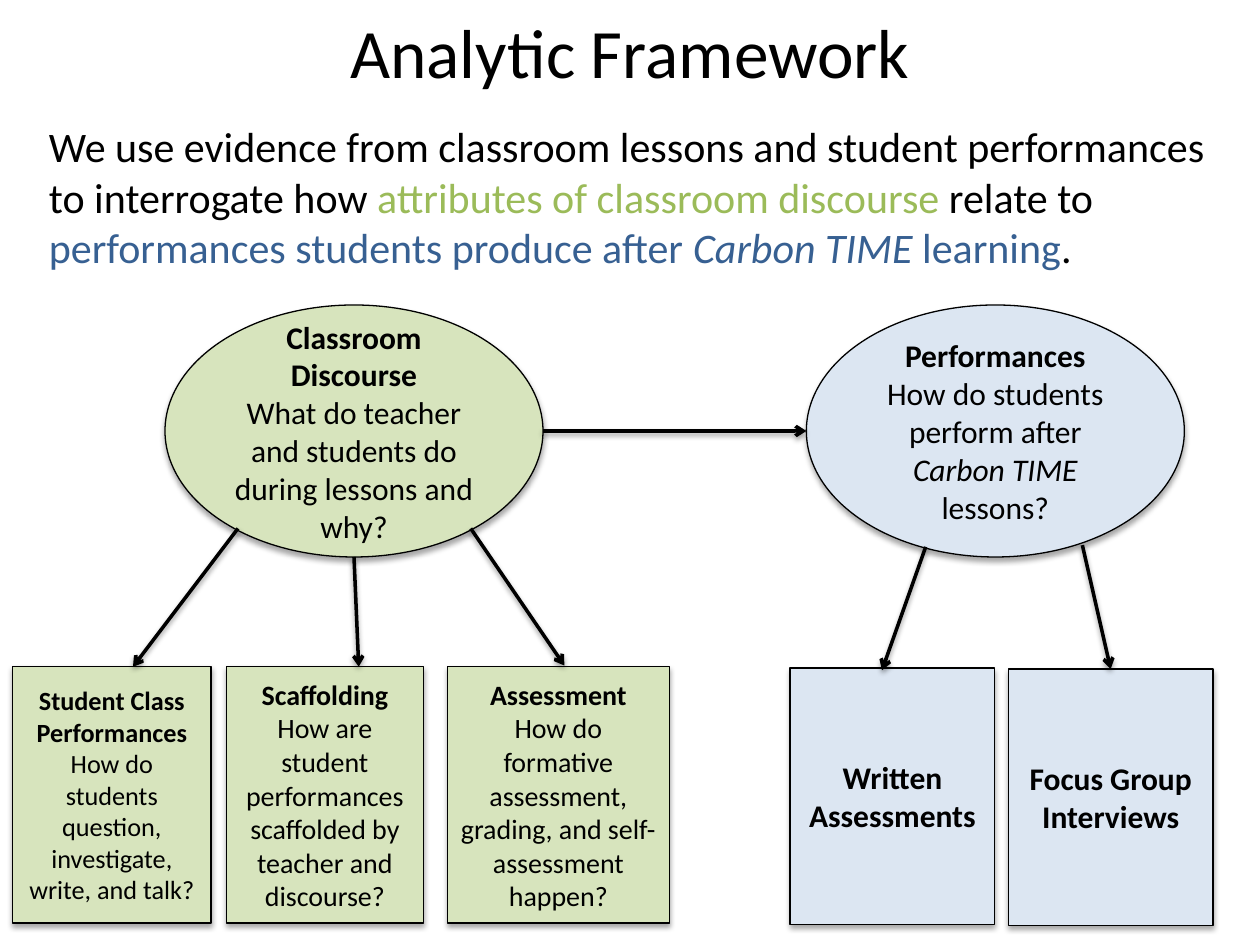
from lxml.etree import SubElement
from pptx import Presentation
from pptx.dml.color import RGBColor
from pptx.enum.shapes import MSO_CONNECTOR, MSO_SHAPE
from pptx.enum.text import MSO_ANCHOR, PP_ALIGN
from pptx.oxml.ns import qn
from pptx.util import Pt

FONT = "Calibri"
BLACK = "000000"
GREEN_FILL = "D7E4BD"
BLUE_FILL = "DCE6F2"
GREEN_TEXT = "9BBB59"
BLUE_TEXT = "376092"


def color(value):
    """Turn a hex string into a colour."""
    return RGBColor.from_string(value)


def add_span(para, text, size, ink=BLACK, bold=False, italic=False):
    """Add one formatted run to a paragraph."""
    span = para.add_run()
    span.text = text
    font = span.font
    font.name, font.size = FONT, Pt(size)
    font.bold, font.italic = bold, italic
    font.color.rgb = color(ink)


def add_shadow(properties, alpha, distance):
    """Give shape properties a soft shadow that falls straight down."""
    effects = properties.find(qn("a:effectLst"))
    if effects is None:
        effects = SubElement(properties, qn("a:effectLst"))
    shadow = SubElement(effects, qn("a:outerShdw"), blurRad=str(Pt(3.1)),
                        dist=str(Pt(distance)), dir="5400000", rotWithShape="0")
    ink = SubElement(shadow, qn("a:srgbClr"), val=BLACK)
    SubElement(ink, qn("a:alpha"), val=str(alpha * 1000))


def add_text(page, left, top, width, height, spans, size, align, anchor):
    """Add a wrapping text box with one paragraph of (text, colour, italic) spans."""
    box = page.shapes.add_textbox(Pt(left), Pt(top), Pt(width), Pt(height))
    frame = box.text_frame
    frame.word_wrap = True
    frame.vertical_anchor = anchor
    para = frame.paragraphs[0]
    para.alignment = align
    for text, ink, italic in spans:
        add_span(para, text, size, ink, italic=italic)


def add_node(page, kind, left, top, width, height, fill, size, heading, question=()):
    """Add a shadowed shape with a bold heading and (text, italic) question spans."""
    node = page.shapes.add_shape(kind, Pt(left), Pt(top), Pt(width), Pt(height))
    node.shadow.inherit = False
    node.fill.solid()
    node.fill.fore_color.rgb = color(fill)
    node.line.color.rgb = color(BLACK)
    node.line.width = Pt(0.75)
    add_shadow(node._element.spPr, 35, 1.8)
    frame = node.text_frame
    frame.word_wrap = True
    frame.vertical_anchor = MSO_ANCHOR.MIDDLE
    para = frame.paragraphs[0]
    para.alignment = PP_ALIGN.CENTER
    add_span(para, heading, size, bold=True)
    if question:
        para = frame.add_paragraph()
        para.alignment = PP_ALIGN.CENTER
        for text, italic in question:
            add_span(para, text, size, italic=italic)
    return node


def add_arrow(page, start, end):
    """Add a black arrow between two points."""
    arrow = page.shapes.add_connector(
        MSO_CONNECTOR.STRAIGHT, *(Pt(value) for value in start + end))
    arrow.line.color.rgb = color(BLACK)
    arrow.line.width = Pt(2)
    SubElement(arrow.line._get_or_add_ln(), qn("a:tailEnd"), type="arrow")
    add_shadow(arrow._element.spPr, 38, 1.6)
    return arrow


def main():
    """Build the slide and save it."""
    deck = Presentation()
    deck.slide_width, deck.slide_height = Pt(720), Pt(540)
    page = deck.slides.add_slide(deck.slide_layouts[6])

    add_text(page, 36, 0.7, 648, 57, [("Analytic Framework", BLACK, False)],
             39.6, PP_ALIGN.CENTER, MSO_ANCHOR.MIDDLE)
    statement = [
        ("We use evidence from classroom lessons and student performances "
         "to interrogate how ", BLACK, False),
        ("attributes of classroom discourse ", GREEN_TEXT, False),
        ("relate to ", BLACK, False),
        ("performances students produce after ", BLUE_TEXT, False),
        ("Carbon TIME ", BLUE_TEXT, True),
        ("learning", BLUE_TEXT, False),
        (".", BLACK, False),
    ]
    add_text(page, 20.9, 65.5, 683.5, 94.5, statement, 24, PP_ALIGN.LEFT, MSO_ANCHOR.TOP)

    topics = [
        (94.3, GREEN_FILL, "Classroom Discourse",
         [("What do teacher and students do during lessons and why?", False)]),
        (460.8, BLUE_FILL, "Performances",
         [("How do students perform after ", False), ("Carbon TIME ", True),
          ("lessons?", False)]),
    ]
    for left, fill, heading, question in topics:
        add_node(page, MSO_SHAPE.OVAL, left, 174.3, 216, 144, fill, 18, heading, question)

    sources = [
        (7.2, 381, 113.5, GREEN_FILL, 15, "Student Class Performances",
         [("How do students question, investigate, write, and talk?", False)]),
        (129.4, 381, 112.5, GREEN_FILL, 16, "Scaffolding",
         [("How are student performances scaffolded by teacher and discourse?", False)]),
        (255.6, 381, 127, GREEN_FILL, 16, "Assessment",
         [("How do formative assessment, grading, and self-assessment happen?", False)]),
        (451.5, 381.7, 117, BLUE_FILL, 18, "Written Assessments", []),
        (576.2, 382.3, 117, BLUE_FILL, 18, "Focus Group Interviews", []),
    ]
    for left, top, width, fill, size, heading, question in sources:
        node = add_node(page, MSO_SHAPE.RECTANGLE, left, top, width, 146.5,
                        fill, size, heading, question)
    interviews = node

    arrows = [
        ((136, 302), (76, 381)),
        ((202.3, 318.3), (205, 381)),
        ((269, 302), (322.5, 380.3)),
        ((529, 312.5), (504, 383)),
        ((310.3, 246.3), (460.8, 246.3)),
    ]
    for start, end in arrows:
        add_arrow(page, start, end)
    add_arrow(page, (618.5, 311.5), (634.7, 382.3)).end_connect(interviews, 0)

    deck.save("out.pptx")


if __name__ == "__main__":
    main()
